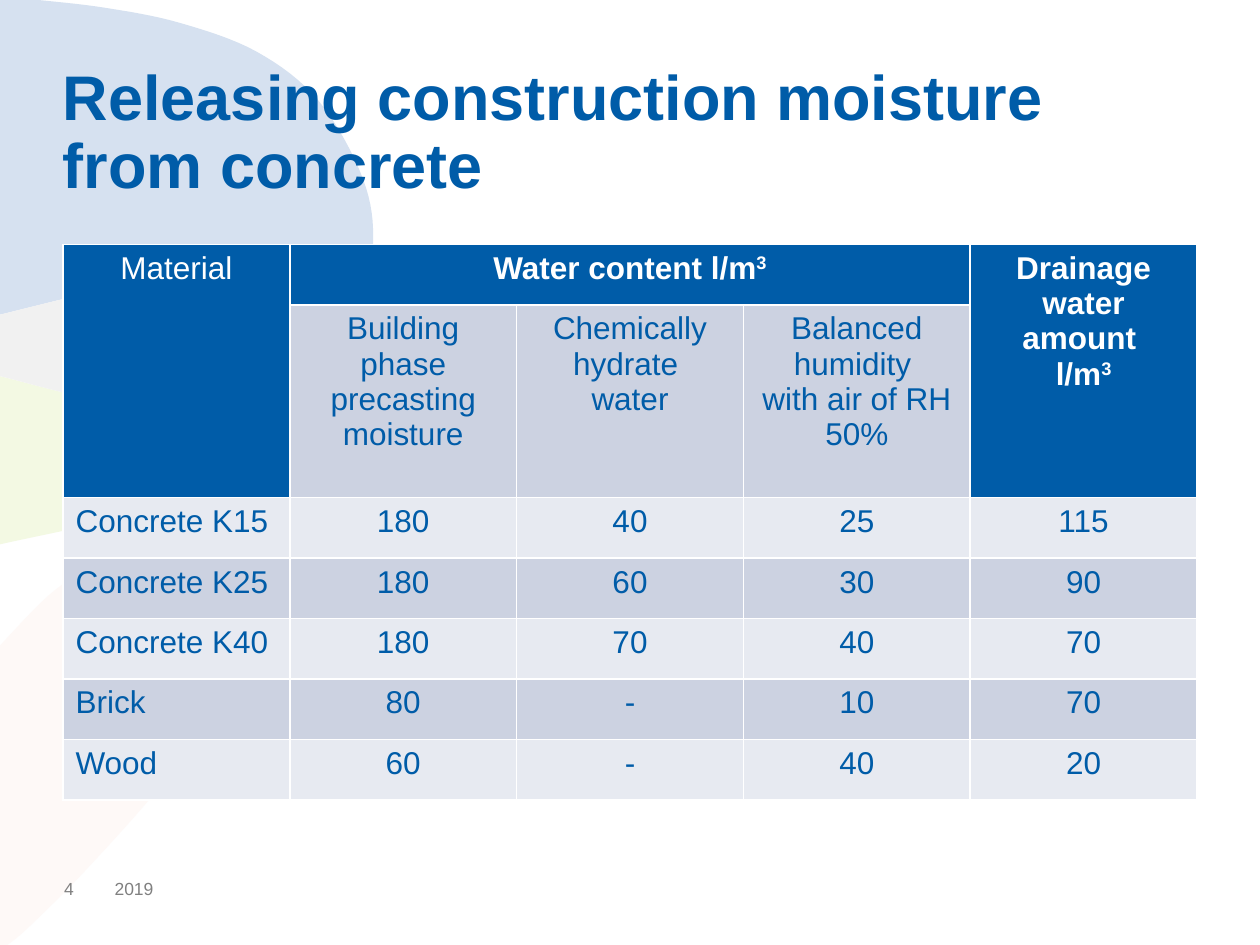
from lxml.etree import SubElement
from pptx import Presentation
from pptx.dml.color import RGBColor
from pptx.enum.text import MSO_ANCHOR, PP_ALIGN
from pptx.oxml.ns import qn
from pptx.util import Inches, Pt

SLIDE_WIDTH = Inches(10)
SLIDE_HEIGHT = Inches(7.5)

BLUE = RGBColor(0x00, 0x5C, 0xA8)
WHITE = RGBColor(0xFF, 0xFF, 0xFF)
GREY = RGBColor(0x80, 0x80, 0x80)
BAND_DARK = RGBColor(0xCC, 0xD2, 0xE1)
BAND_LIGHT = RGBColor(0xE7, 0xEA, 0xF1)
PETAL_BLUE = RGBColor(0xD6, 0xE1, 0xF0)
PETAL_GREY = RGBColor(0xF1, 0xF1, 0xF1)
PETAL_GREEN = RGBColor(0xF3, 0xF9, 0xE3)
PETAL_PEACH = RGBColor(0xFE, 0xF9, 0xF7)

TITLE = {"name": "Arial", "size": Pt(36), "bold": True}
FOOTER = {"name": "Arial", "size": Pt(10), "bold": False}
BODY = {"name": "Arial", "size": Pt(18), "bold": False}
STRONG = {**BODY, "bold": True}

LEFT_PERCENT = 5
COLUMN_PERCENT = 18
TABLE_TOP_PERCENT = 25.87
ROW_PERCENT = 6.4
SUBHEADER_PERCENT = 20.4
FOOTER_TOP_PERCENT = 93
FOOTER_HEIGHT_PERCENT = 2.1

CURVE_STEPS = 8
TOP_LEFT = (0, 0)
BOTTOM_LEFT = (0, 100)
PETAL_TIP = (28.3, 33.5)
UPPER_SEAM = [(0, 33.3), (9.4, 30.4), (17.8, 29.3), (24.2, 30.4), PETAL_TIP]
LOWER_SEAM = [(0, 39.8), (8.2, 42.5), (15.6, 43.8), (22.4, 41.5), (26.1, 37.6), PETAL_TIP]
BLUE_EDGE = [PETAL_TIP, (29.6, 26), (28.8, 18.9), (25.3, 10.7), (20.4, 5.5),
             (14.2, 2.4), (8.2, 0.8), (3, 0)]
GREEN_EDGE = [PETAL_TIP, (29.7, 37.5), (27.7, 43.1), (21.9, 48.8), (13.4, 53.5), (0, 57.6)]
PEACH_EDGE = [(0, 68.3), (4.5, 62.3), (8.9, 59.3), (13.9, 58), (18.5, 59.6), (20.7, 64.1),
              (18.4, 73.1), (13, 82.8), (6.8, 92.1), (2.3, 98.1), (0.6, 100)]

HEADERS = [
    (0, 0, 1, 0, "Material", BODY),
    (0, 1, 0, 3, "Water content l/m^3", STRONG),
    (0, 4, 1, 4, "Drainage water amount \nl/m^3", STRONG),
]
SUBHEADERS = ["Building phase precasting moisture", "Chemically hydrate \vwater",
              "Balanced humidity \nwith air of RH 50%"]
MATERIALS = [
    ("Concrete K15", "180", "40", "25", "115"),
    ("Concrete K25", "180", "60", "30", "90"),
    ("Concrete K40", "180", "70", "40", "70"),
    ("Brick", "80", "-", "10", "70"),
    ("Wood", "60", "-", "40", "20"),
]


def across(percent):
    return round(SLIDE_WIDTH * percent / 100)


def down(percent):
    return round(SLIDE_HEIGHT * percent / 100)


def place(left, top, width, height):
    return across(left), down(top), across(width), down(height)


def set_all(target, values):
    for name, value in values.items():
        setattr(target, name, value)


def spline(before, start, end, after, share):
    return 0.5 * (2 * start + (end - before) * share
                  + (2 * before - 5 * start + 4 * end - after) * share ** 2
                  + (3 * start - before - 3 * end + after) * share ** 3)


def smooth(knots):
    padded = [knots[0], *knots, knots[-1]]
    points = [knots[0]]
    for neighbours in zip(padded, padded[1:], padded[2:], padded[3:]):
        for step in range(1, CURVE_STEPS + 1):
            points.append(tuple(spline(*values, step / CURVE_STEPS)
                                for values in zip(*neighbours)))
    return points


def add_petal(page, outline, color):
    points = [(across(x), down(y)) for x, y in outline]
    builder = page.shapes.build_freeform(*points[0])
    builder.add_line_segments(points[1:], close=True)
    petal = builder.convert_to_shape()
    petal.shadow.inherit = False
    petal.fill.solid()
    petal.fill.fore_color.rgb = color
    petal.line.fill.background()


def add_petals(page):
    upper, lower = smooth(UPPER_SEAM), smooth(LOWER_SEAM)
    add_petal(page, smooth(PEACH_EDGE) + [BOTTOM_LEFT], PETAL_PEACH)
    add_petal(page, lower + smooth(GREEN_EDGE), PETAL_GREEN)
    add_petal(page, upper + smooth(BLUE_EDGE) + [TOP_LEFT], PETAL_BLUE)
    add_petal(page, upper + lower[::-1], PETAL_GREY)


def add_span(para, text, style, color, raised=False):
    span = para.add_run()
    span.text = text
    set_all(span.font, style)
    span.font.color.rgb = color
    if raised:
        span.font._element.set("baseline", "30000")


def write_text(frame, text, style, color, align=PP_ALIGN.LEFT):
    for index, line in enumerate(text.split("\n")):
        para = frame.add_paragraph() if index else frame.paragraphs[0]
        para.alignment = align
        for part_index, part in enumerate(line.split("\v")):
            if part_index:
                para.add_line_break()
            base, _, power = part.partition("^")
            add_span(para, base, style, color)
            if power:
                add_span(para, power, style, color, raised=True)


def add_label(page, bounds, text, style, color, anchor):
    box = page.shapes.add_textbox(*place(*bounds))
    set_all(box.text_frame, {"word_wrap": True, "vertical_anchor": anchor, "margin_left": 0,
                             "margin_right": 0, "margin_top": 0, "margin_bottom": 0})
    write_text(box.text_frame, text, style, color)
    return box


def add_title(page, text):
    bounds = (LEFT_PERCENT, 7, 90, 16.8)
    box = add_label(page, bounds, text, TITLE, BLUE, MSO_ANCHOR.TOP)
    box.text_frame.paragraphs[0].line_spacing = 0.9


def add_footer(page, left, width, text):
    bounds = (left, FOOTER_TOP_PERCENT, width, FOOTER_HEIGHT_PERCENT)
    add_label(page, bounds, text, FOOTER, GREY, MSO_ANCHOR.MIDDLE)


def format_cell(cell, fill):
    properties = cell._tc.get_or_add_tcPr()
    for side in ("a:lnL", "a:lnR", "a:lnT", "a:lnB"):
        border = SubElement(properties, qn(side), w=str(Pt(1)))
        paint = SubElement(border, qn("a:solidFill"))
        SubElement(paint, qn("a:srgbClr"), val=str(WHITE))
    cell.fill.solid()
    cell.fill.fore_color.rgb = fill


def cell_color(row, column, last_column):
    if row == 0 or row == 1 and column in (0, last_column):
        return BLUE
    return BAND_DARK if row % 2 else BAND_LIGHT


def add_grid(page):
    column_count = len(MATERIALS[0])
    heights = [ROW_PERCENT, SUBHEADER_PERCENT] + [ROW_PERCENT] * len(MATERIALS)
    bounds = (LEFT_PERCENT, TABLE_TOP_PERCENT, COLUMN_PERCENT * column_count, sum(heights))
    table = page.shapes.add_table(len(heights), column_count, *place(*bounds)).table
    for row, height in enumerate(heights):
        table.rows[row].height = down(height)
        for column in range(column_count):
            format_cell(table.cell(row, column), cell_color(row, column, column_count - 1))
    return table


def add_moisture_table(page):
    table = add_grid(page)
    for top, left, bottom, right, text, style in HEADERS:
        cell = table.cell(top, left)
        cell.merge(table.cell(bottom, right))
        write_text(cell.text_frame, text, style, WHITE, PP_ALIGN.CENTER)
    for column, text in enumerate(SUBHEADERS, 1):
        write_text(table.cell(1, column).text_frame, text, BODY, BLUE, PP_ALIGN.CENTER)
    for row, values in enumerate(MATERIALS, 2):
        for column, text in enumerate(values):
            align = PP_ALIGN.CENTER if column else PP_ALIGN.JUSTIFY
            write_text(table.cell(row, column).text_frame, text, BODY, BLUE, align)


def main():
    deck = Presentation()
    set_all(deck, {"slide_width": SLIDE_WIDTH, "slide_height": SLIDE_HEIGHT})
    page = deck.slides.add_slide(deck.slide_layouts[6])
    add_petals(page)
    add_title(page, "Releasing construction moisture from concrete")
    add_footer(page, 9.1, 9.4, "2019")
    add_footer(page, 5.1, 3.9, "4")
    add_moisture_table(page)
    deck.save("out.pptx")


if __name__ == "__main__":
    main()
